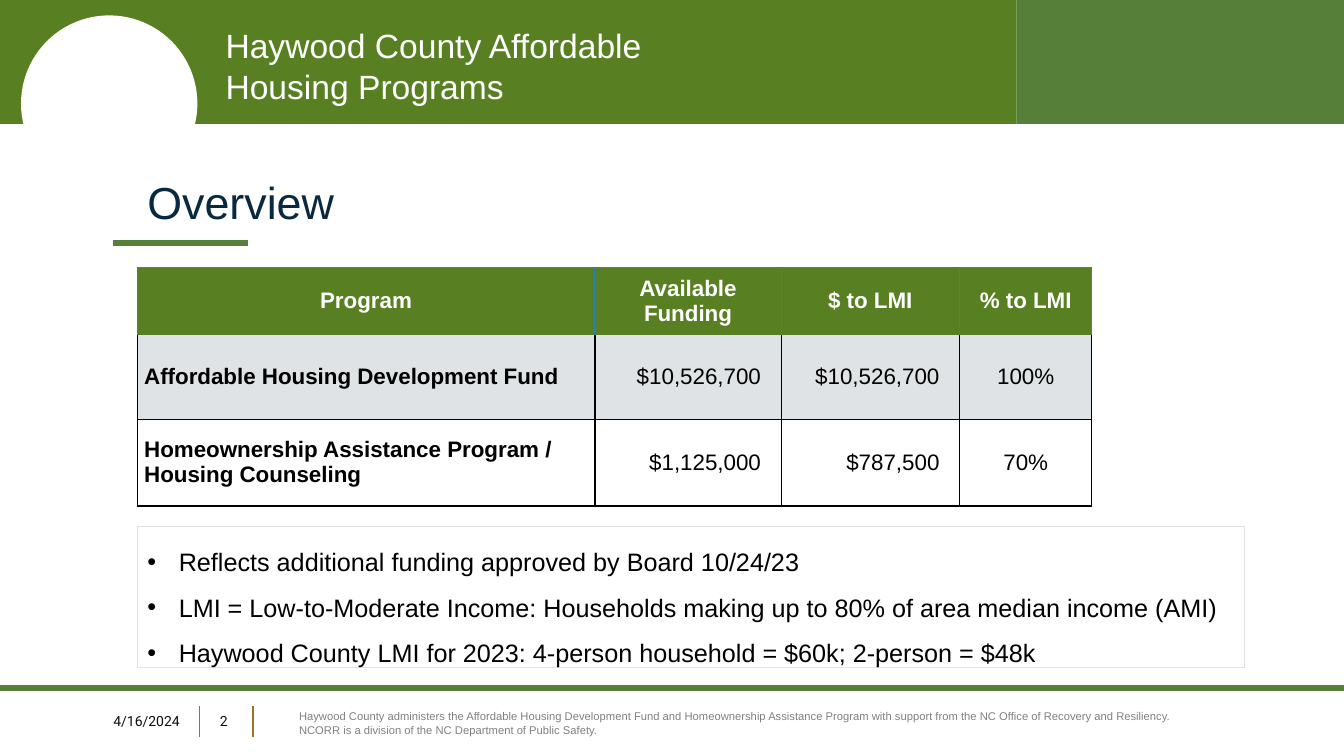
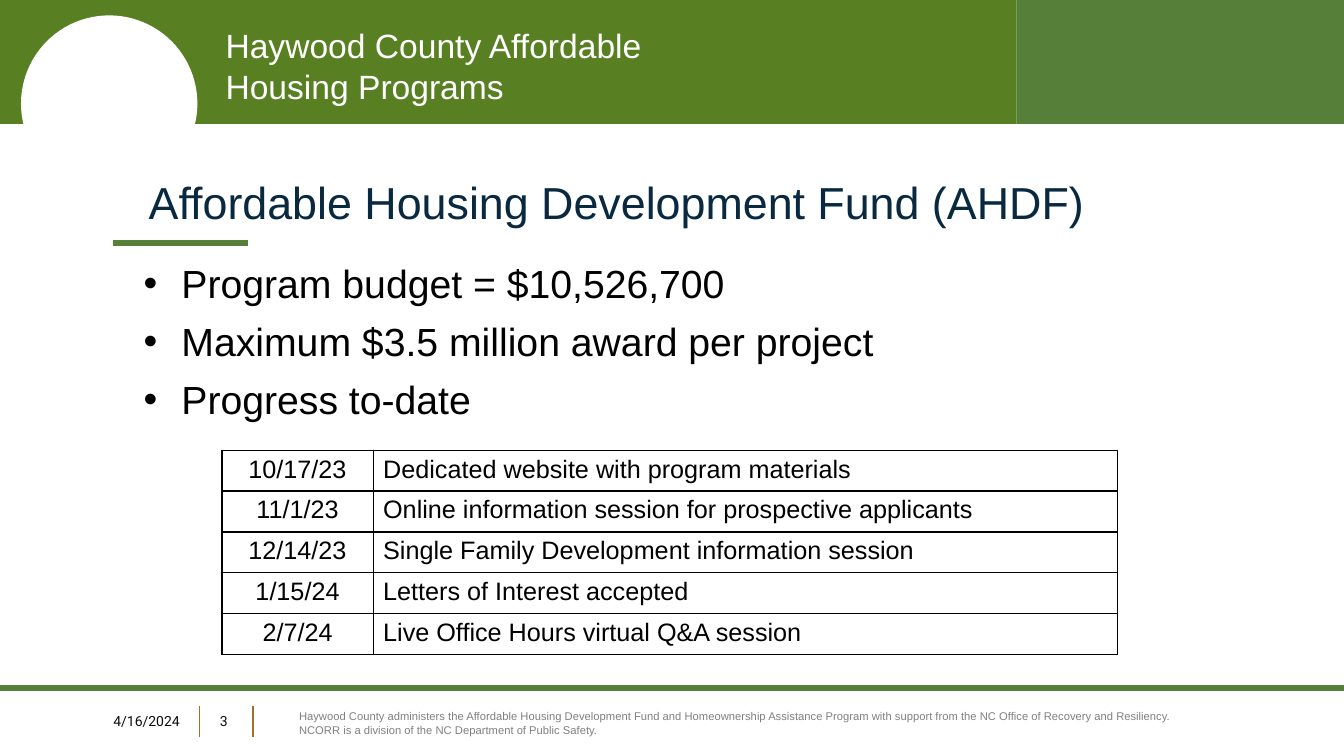
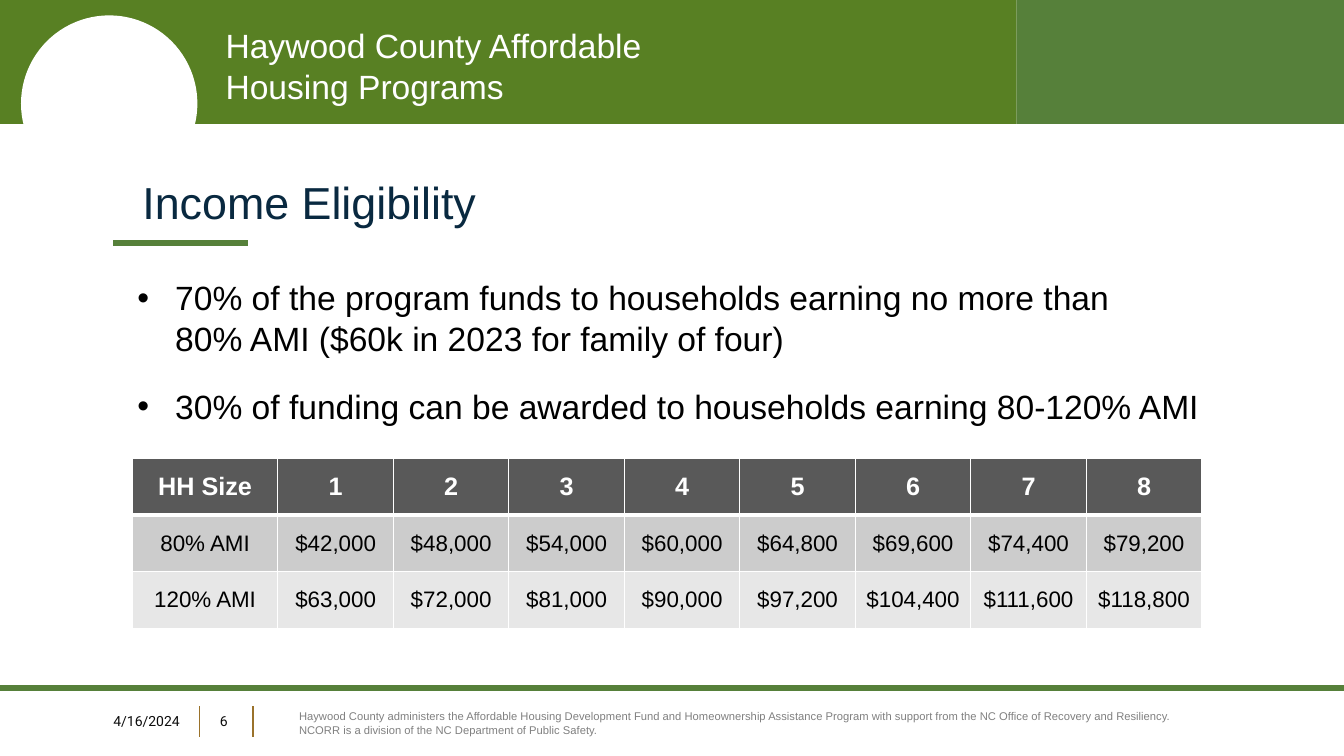
from lxml import etree
from pptx import Presentation
from pptx.dml.color import RGBColor
from pptx.enum.shapes import MSO_CONNECTOR, MSO_SHAPE
from pptx.enum.text import MSO_ANCHOR, MSO_AUTO_SIZE, PP_ALIGN
from pptx.oxml.ns import qn
from pptx.util import Pt

LEFT, CENTER, RIGHT = PP_ALIGN.LEFT, PP_ALIGN.CENTER, PP_ALIGN.RIGHT
TOP, MIDDLE = MSO_ANCHOR.TOP, MSO_ANCHOR.MIDDLE
RECTANGLE, OVAL = MSO_SHAPE.RECTANGLE, MSO_SHAPE.OVAL
STRAIGHT = MSO_CONNECTOR.STRAIGHT
NO_AUTOFIT = MSO_AUTO_SIZE.NONE

COLORS = {
    "band": "588023",
    "accent": "56803A",
    "gold": "9A722B",
    "title": "092940",
    "footer": "0D0D0D",
    "credit": "808080",
    "blue": "2683C6",
    "pale": "DFE3E5",
    "dark": "595959",
    "medium": "CCCCCC",
    "light": "E7E7E7",
    "black": "000000",
    "white": "FFFFFF",
}
WIDTH, HEIGHT = 960, 540
BAND_HEIGHT, BAND_SPLIT = 88.5, 726
NO_GRID_STYLE = "{2D5ABB26-0587-4C30-8999-92F81FD0307C}"
BORDER_TAGS = {"left": "a:lnL", "right": "a:lnR", "top": "a:lnT", "bottom": "a:lnB"}
DATE = "4/16/2024"
HEADER = "Haywood County Affordable Housing Programs"
CREDIT = (
    "Haywood County administers the Affordable Housing Development Fund and "
    "Homeownership Assistance Program with support from the NC Office of Recovery "
    "and Resiliency. NCORR is a division of the NC Department of Public Safety."
)


def color(name):
    return RGBColor.from_string(COLORS[name])


def points(box):
    return [Pt(length) for length in box]


def apply(target, values):
    for name, value in values.items():
        setattr(target, name, value)


def place(shape, box):
    apply(shape, dict(zip(("left", "top", "width", "height"), points(box))))


def set_margins(target, horizontal, vertical):
    apply(target, {
        "margin_left": Pt(horizontal), "margin_right": Pt(horizontal),
        "margin_top": Pt(vertical), "margin_bottom": Pt(vertical),
    })


def write(paragraph, text, size, color_name, bold=False, font="Arial", **layout):
    paragraph.text = text
    apply(paragraph, layout)
    for line_break in paragraph._p.findall(qn("a:br")):
        etree.SubElement(line_break, qn("a:rPr")).set("sz", str(size * 100))
    for run in paragraph.runs:
        apply(run.font, {"size": Pt(size), "name": font, "bold": bold})
        run.font.color.rgb = color(color_name)


def add_text(slide, box, text, size, color_name, anchor=MIDDLE, **format_values):
    frame = slide.shapes.add_textbox(*points(box)).text_frame
    apply(frame, {"word_wrap": True, "vertical_anchor": anchor})
    write(frame.paragraphs[0], text, size, color_name, **format_values)


def add_plain(slide, kind, box, fill):
    shape = slide.shapes.add_shape(kind, *points(box))
    shape.shadow.inherit = False
    shape.fill.solid()
    shape.fill.fore_color.rgb = color(fill)
    shape.line.fill.background()


def add_line(slide, ends, color_name, width):
    line = slide.shapes.add_connector(STRAIGHT, *points(ends))
    line.line.color.rgb = color(color_name)
    line.line.width = Pt(width)
    etree.SubElement(line._element.spPr, qn("a:effectLst"))


def build_frame(slide):
    add_line(slide, (81, 173.5, 177, 173.5), "accent", 4.5)
    add_line(slide, (0, 491.5, WIDTH, 491.5), "accent", 4.5)
    for x in (142.5, 180.75):
        add_line(slide, (x, 504.5, x, 526.5), "gold", 1)
    add_text(slide, (206.5, 504, 647, 25), CREDIT, 8, "credit")
    add_plain(slide, RECTANGLE, (BAND_SPLIT, 0, WIDTH - BAND_SPLIT, BAND_HEIGHT), "accent")
    add_plain(slide, RECTANGLE, (0, 0, BAND_SPLIT, BAND_HEIGHT), "band")
    add_text(slide, (154, 14.5, 320, 65.5), HEADER, 24, "white", TOP)
    add_plain(slide, OVAL, (15, 11, 126, 126), "white")


def move_frame_to_layout(slide):
    build_frame(slide)
    for shape in list(slide.shapes):
        if not shape.is_placeholder:
            slide.slide_layout.shapes.element.append(shape._element)


def build_title(slide, left, text):
    title = slide.shapes.title
    place(title, (left, 106.5, 846 - left + 74, 82))
    apply(title.text_frame, {"auto_size": NO_AUTOFIT, "vertical_anchor": MIDDLE})
    write(title.text_frame.paragraphs[0], text, 32, "title", alignment=LEFT, line_spacing=0.8)


def build_footer(slide, number):
    add_text(slide, (0, 504, 135.5, 21.5), DATE, 10, "footer", font="Roboto", alignment=RIGHT)
    add_text(slide, (150, 504, 28, 21.5), number, 10, "footer", font="Roboto")


def build_bullets(slide, box, items, size, indent, margins, before=0, after=0, spacing=1.0):
    body = slide.placeholders[1]
    place(body, box)
    frame = body.text_frame
    apply(frame, {"auto_size": NO_AUTOFIT, "word_wrap": True, "vertical_anchor": TOP})
    set_margins(frame, *margins)
    for index, item in enumerate(items):
        paragraph = frame.add_paragraph() if index else frame.paragraphs[0]
        properties = paragraph._p.get_or_add_pPr()
        properties.set("marL", str(Pt(indent)))
        properties.set("indent", str(-Pt(indent)))
        write(paragraph, item, size, "black", line_spacing=spacing,
              space_before=Pt(before if index else 0), space_after=Pt(after))
    return body


def set_borders(cell, borders):
    properties = cell._tc.get_or_add_tcPr()
    for side, tag in BORDER_TAGS.items():
        if side in borders:
            color_name, width = borders[side]
            line = etree.SubElement(properties, qn(tag), w=str(Pt(width)))
            fill = etree.SubElement(line, qn("a:solidFill"))
            etree.SubElement(fill, qn("a:srgbClr"), val=COLORS[color_name])


def all_sides(color_name, width, **changes):
    return {**dict.fromkeys(BORDER_TAGS, (color_name, width)), **changes}


def build_table(slide, corner, widths, heights, rows, style_of):
    box = (*corner, sum(widths), sum(heights))
    table = slide.shapes.add_table(len(rows), len(widths), *points(box)).table
    apply(table, {"first_row": False, "horz_banding": False})
    table._tbl.tblPr.find(qn("a:tableStyleId")).text = NO_GRID_STYLE
    for column, width in zip(table.columns, widths):
        column.width = Pt(width)
    for row, height in zip(table.rows, heights):
        row.height = Pt(height)
    for row_index, texts in enumerate(rows):
        for column_index, text in enumerate(texts):
            cell = table.cell(row_index, column_index)
            style = style_of(row_index, column_index)
            set_borders(cell, style["borders"])
            if "fill" in style:
                cell.fill.solid()
                cell.fill.fore_color.rgb = color(style["fill"])
            else:
                cell.fill.background()
            apply(cell, style.get("cell", {}))
            write(cell.text_frame.paragraphs[0], text, **style["text"])


def funding_style(row, column):
    header, amount = row == 0, row > 0 and column in (1, 2)
    borders = all_sides("blue", 0.75) if header else all_sides("black", 1)
    if row < 2:
        borders.pop("bottom" if header else "top")
    alignment = RIGHT if amount else LEFT if row and column == 0 else CENTER
    return {
        "fill": ("band", "pale", "white")[row],
        "borders": borders,
        "cell": {
            "vertical_anchor": MIDDLE, "margin_top": 0, "margin_bottom": 0,
            "margin_left": Pt(5), "margin_right": Pt(14.4 if amount else 5),
        },
        "text": {
            "size": 16, "color_name": "white" if header else "black",
            "bold": header or column == 0, "alignment": alignment,
        },
    }


def progress_style(row, column):
    return {
        "borders": all_sides("black", 1),
        "text": {"size": 18, "color_name": "black", "alignment": LEFT if column else CENTER},
    }


def income_style(row, column):
    header = row == 0
    changes = {"bottom": ("white", 3)} if header else {"top": ("white", 3)} if row == 1 else {}
    return {
        "fill": ("dark", "medium", "light")[row],
        "borders": all_sides("white", 1, **changes),
        "cell": {"vertical_anchor": MIDDLE},
        "text": {
            "size": 18 if header else 16, "color_name": "white" if header else "black",
            "bold": header, "alignment": CENTER,
        },
    }


def build_overview(slide):
    build_title(slide, 98, "Overview")
    build_footer(slide, "2")
    build_table(slide, (98, 191), (327, 133, 127.5, 94.5), (48, 60.5, 62), (
        ("Program", "Available Funding", "$ to LMI", "% to LMI"),
        ("Affordable Housing Development Fund", "$10,526,700", "$10,526,700", "100%"),
        ("Homeownership Assistance Program / Housing Counseling", "$1,125,000", "$787,500", "70%"),
    ), funding_style)
    notes_box = build_bullets(slide, (98, 376, 791, 101), (
        "Reflects additional funding approved by Board 10/24/23",
        "LMI = Low-to-Moderate Income: Households making up to 80% of area median income (AMI)",
        "Haywood County LMI for 2023: 4-person household = $60k; 2-person = $48k",
    ), 18, 22.5, (7.2, 3.6), spacing=1.5)
    notes_box.line.color.rgb = color("pale")
    notes_box.line.width = Pt(0.75)


def build_development_fund(slide):
    build_title(slide, 99, "Affordable Housing Development Fund (AHDF)")
    build_footer(slide, "3")
    build_bullets(slide, (99, 181.5, 822, 125), (
        "Program budget = $10,526,700",
        "Maximum $3.5 million award per project",
        "Progress to-date",
    ), 28, 27, (3.6, 3.6), before=6, after=2)
    build_table(slide, (158.5, 321.5), (108, 532), [29.25] * 5, (
        ("10/17/23", "Dedicated website with program materials"),
        ("11/1/23", "Online information session for prospective applicants"),
        ("12/14/23", "Single Family Development information session"),
        ("1/15/24", "Letters of Interest accepted"),
        ("2/7/24", "Live Office Hours virtual Q&A session"),
    ), progress_style)


def build_income(slide):
    build_title(slide, 94.5, "Income Eligibility")
    build_footer(slide, "6")
    build_bullets(slide, (94.5, 194.5, 771, 114.5), (
        "70% of the program funds to households earning no more than\n"
        "80% AMI ($60k in 2023 for family of four)",
        "30% of funding can be awarded to households earning 80-120% AMI",
    ), 24, 27, (3.6, 3.6), before=18, after=2)
    build_table(slide, (94.5, 327.5), [104] + [82.5] * 8, [40.5] * 3, (
        ("HH Size", "1", "2", "3", "4", "5", "6", "7", "8"),
        ("80% AMI", "$42,000", "$48,000", "$54,000", "$60,000",
         "$64,800", "$69,600", "$74,400", "$79,200"),
        ("120% AMI", "$63,000", "$72,000", "$81,000", "$90,000",
         "$97,200", "$104,400", "$111,600", "$118,800"),
    ), income_style)


def main():
    presentation = Presentation()
    apply(presentation, {"slide_width": Pt(WIDTH), "slide_height": Pt(HEIGHT)})
    layout = presentation.slide_layouts[1]
    for index, build in enumerate((build_overview, build_development_fund, build_income)):
        slide = presentation.slides.add_slide(layout)
        if index == 0:
            move_frame_to_layout(slide)
        build(slide)
    presentation.save("out.pptx")


if __name__ == "__main__":
    main()
